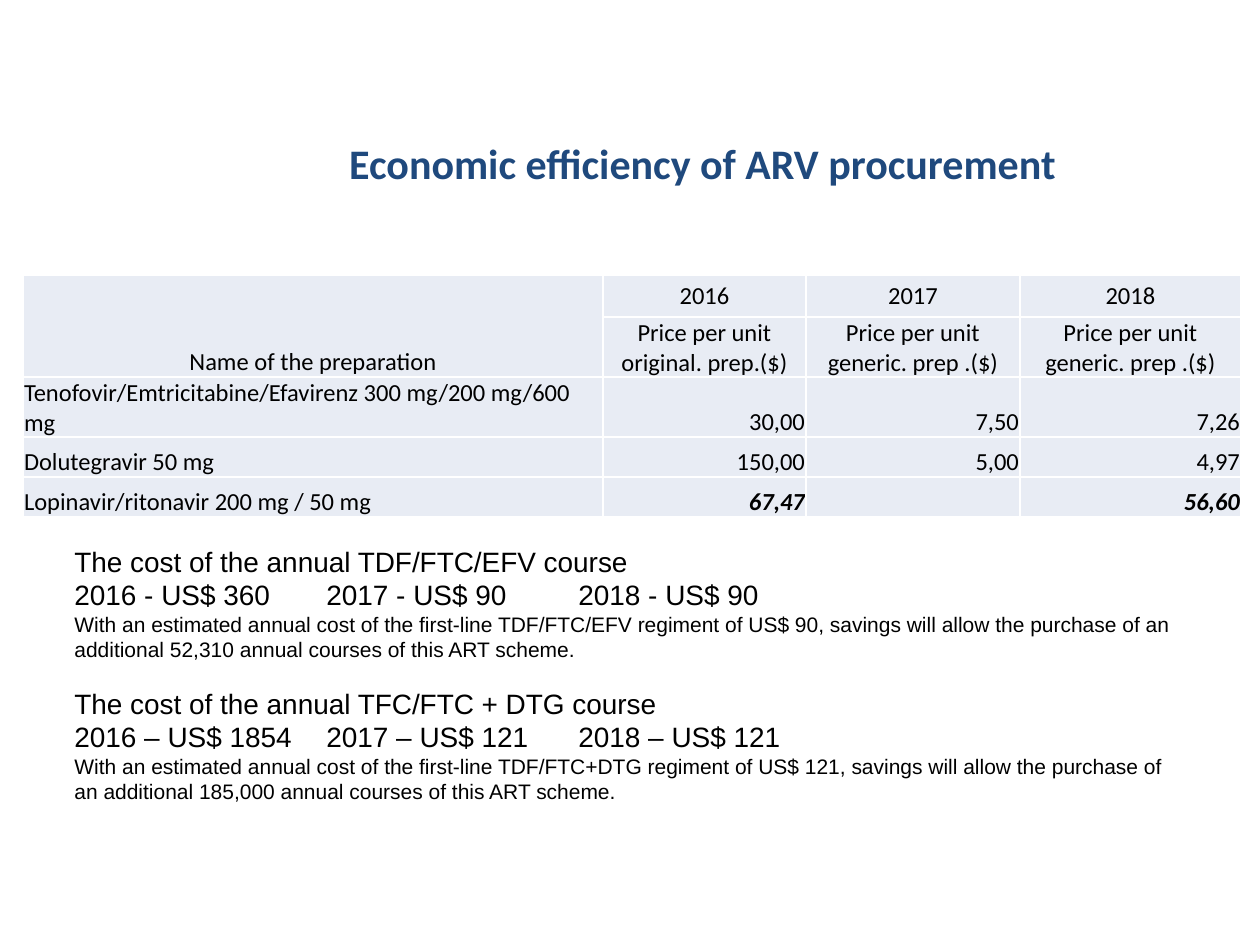
from pptx import Presentation
from pptx.dml.color import RGBColor
from pptx.enum.text import MSO_ANCHOR as ANCHOR, PP_ALIGN as ALIGN
from pptx.oxml.ns import qn
from pptx.util import Emu, Pt
from lxml.etree import SubElement

EMU_PER_PX = 914400 / 126
NAVY = RGBColor(0x1F, 0x49, 0x7D)
BLACK = RGBColor(0x00, 0x00, 0x00)
PALE_BLUE = RGBColor(0xE8, 0xEC, 0xF4)
WHITE = RGBColor(0xFF, 0xFF, 0xFF)

TITLE = dict(name="Calibri", size=Pt(24), bold=True)
CELL = dict(name="Calibri", size=Pt(14))
STRONG_CELL = dict(CELL, bold=True, italic=True)
HEADING = dict(name="Arial", size=Pt(16))
DETAIL = dict(name="Arial", size=Pt(12))

COLUMN_WIDTHS = (580, 203, 214, 221)
ROW_HEIGHTS = (41, 60, 60, 40, 40)
PRICE_ROWS = (
    ("Name of the preparation", "2016", "2017", "2018"),
    ("", "Price per unit original. prep.($)",
     "Price per unit generic. prep .($)", "Price per unit generic. prep .($)"),
    ("Tenofovir/Emtricitabine/Efavirenz 300 mg/200 mg/600 mg",
     "30,00", "7,50", "7,26"),
    ("Dolutegravir 50 mg", "150,00", "5,00", "4,97"),
    ("Lopinavir/ritonavir 200 mg / 50 mg", "67,47", "", "56,60"),
)
COURSES = (
    ("The cost of the annual TDF/FTC/EFV course",
     "2016 - US$ 360\t2017 - US$ 90\t2018 - US$ 90",
     "With an estimated annual cost of the first-line TDF/FTC/EFV regiment of "
     "US$ 90, savings will allow the purchase of an additional 52,310 annual "
     "courses of this ART scheme."),
    ("The cost of the annual TFC/FTC + DTG course",
     "2016 – US$ 1854\t2017 – US$ 121\t2018 – US$ 121",
     "With an estimated annual cost of the first-line TDF/FTC+DTG regiment of "
     "US$ 121, savings will allow the purchase of an additional 185,000 annual "
     "courses of this ART scheme."),
)
YEAR_TABS = (252, 504)


def px(length):
    return Emu(round(length * EMU_PER_PX))


def write(paragraph, text, font_format, color=BLACK, align=ALIGN.LEFT):
    paragraph.alignment = align
    run = paragraph.add_run()
    run.text = text
    for key, value in font_format.items():
        setattr(run.font, key, value)
    run.font.color.rgb = color


def add_text_frame(slide, *box):
    frame = slide.shapes.add_textbox(*map(px, box)).text_frame
    frame.word_wrap = True
    return frame


def add_tabs(paragraph, positions):
    tab_list = SubElement(paragraph._p.get_or_add_pPr(), qn("a:tabLst"))
    for position in positions:
        SubElement(tab_list, qn("a:tab"), pos=str(px(position)), algn="l")


def add_course_costs(slide):
    frame = add_text_frame(slide, 62, 538, 1140, 276)
    paragraph = frame.paragraphs[0]
    for index, (heading, costs, detail) in enumerate(COURSES):
        if index:
            paragraph = frame.add_paragraph()
            paragraph.space_before = Pt(14)
        write(paragraph, heading, HEADING)
        paragraph = frame.add_paragraph()
        add_tabs(paragraph, YEAR_TABS)
        write(paragraph, costs, HEADING)
        write(frame.add_paragraph(), detail, DETAIL)


def add_white_borders(cell):
    properties = cell._tc.get_or_add_tcPr()
    for index, side in enumerate(("lnL", "lnR", "lnT", "lnB")):
        line = properties.makeelement(qn(f"a:{side}"), {"w": str(Pt(1))})
        fill = SubElement(line, qn("a:solidFill"))
        SubElement(fill, qn("a:srgbClr"), val=str(WHITE))
        properties.insert(index, line)


def format_cell(cell, row, column):
    cell.fill.solid()
    cell.fill.fore_color.rgb = PALE_BLUE
    add_white_borders(cell)
    if row == 0 and column > 0:
        return
    cell.vertical_anchor = ANCHOR.MIDDLE if row == 1 else ANCHOR.BOTTOM
    cell.margin_left = cell.margin_right = cell.margin_top = px(1)
    cell.margin_bottom = 0


def add_price_table(slide):
    table = slide.shapes.add_table(
        len(ROW_HEIGHTS), len(COLUMN_WIDTHS), px(23), px(275),
        px(sum(COLUMN_WIDTHS)), px(sum(ROW_HEIGHTS))).table
    table.first_row = table.horz_banding = False
    for column, width in zip(table.columns, COLUMN_WIDTHS):
        column.width = px(width)
    for row, height in zip(table.rows, ROW_HEIGHTS):
        row.height = px(height)
    table.cell(0, 0).merge(table.cell(1, 0))
    for row, texts in enumerate(PRICE_ROWS):
        for column, text in enumerate(texts):
            cell = table.cell(row, column)
            format_cell(cell, row, column)
            if row < 2:
                align = ALIGN.CENTER
            else:
                align = ALIGN.RIGHT if column else ALIGN.LEFT
            is_strong = row == len(PRICE_ROWS) - 1 and column > 0
            if text:
                write(cell.text_frame.paragraphs[0], text,
                      STRONG_CELL if is_strong else CELL, align=align)
            else:
                cell.text_frame.paragraphs[0].font.size = CELL["size"]


def main():
    presentation = Presentation()
    presentation.slide_width, presentation.slide_height = px(1260), px(945)
    slide = presentation.slides.add_slide(presentation.slide_layouts[6])
    title = add_text_frame(slide, 203, 131, 999, 57)
    write(title.paragraphs[0], "Economic efficiency of ARV procurement",
          TITLE, NAVY, ALIGN.CENTER)
    add_course_costs(slide)
    add_price_table(slide)
    presentation.save("out.pptx")


if __name__ == "__main__":
    main()
